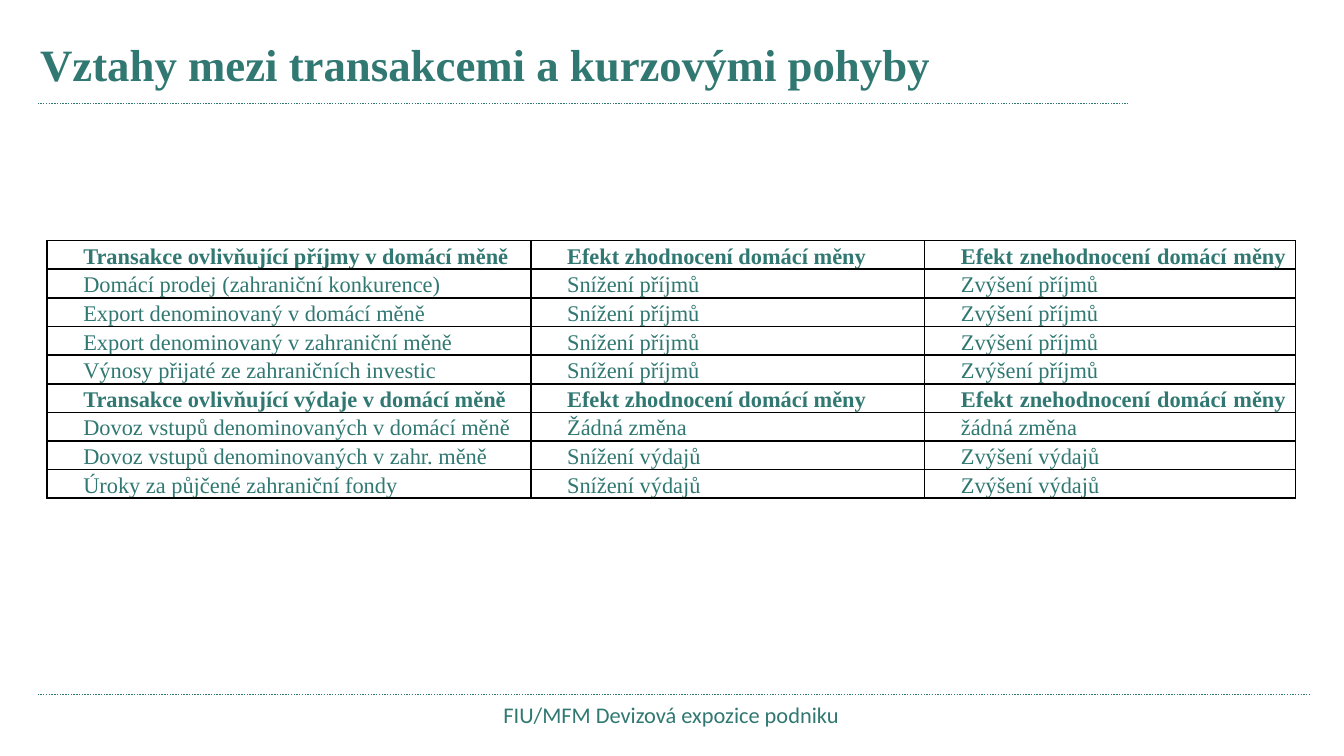
"""Build a slide with a table of transactions and exchange rate effects."""
from dataclasses import dataclass

import lxml.etree
import pptx
import pptx.dml.color
import pptx.enum.dml
import pptx.enum.shapes
import pptx.enum.text
import pptx.oxml.ns
import pptx.util

Inches = pptx.util.Inches
Pt = pptx.util.Pt
Align = pptx.enum.text.PP_ALIGN
Anchor = pptx.enum.text.MSO_ANCHOR
qn = pptx.oxml.ns.qn


@dataclass(frozen=True)
class Theme:
    """Colours, fonts and type sizes of the slide."""
    green: str = "307871"
    border: str = "000000"
    serif: str = "Times New Roman"
    sans: str = "Calibri"
    title_size: int = 24
    body_size: int = 12


class SlideBuilder:
    """Draws styled elements on one slide."""

    def __init__(self, slide, theme):
        """Keep the slide and its theme."""
        self.slide = slide
        self.theme = theme

    def style(self, paragraph, font_name, size, bold=False):
        """Set the font of a whole paragraph."""
        font = paragraph.font
        font.name = font_name
        font.size = Pt(size)
        font.bold = bold
        font.color.rgb = pptx.dml.color.RGBColor.from_string(self.theme.green)

    def rule(self, left, right, top):
        """Draw a dotted horizontal line."""
        line = self.slide.shapes.add_connector(
            pptx.enum.shapes.MSO_CONNECTOR.STRAIGHT,
            Inches(left), Inches(top), Inches(right), Inches(top))
        line.line.color.rgb = pptx.dml.color.RGBColor.from_string(self.theme.green)
        line.line.width = Pt(0.75)
        line.line.dash_style = pptx.enum.dml.MSO_LINE.ROUND_DOT
        lxml.etree.SubElement(line._element.spPr, qn("a:effectLst"))

    def text(self, words, place, font_name, size, bold=False,
             align=Align.LEFT, anchor=Anchor.TOP):
        """Add a text box with one paragraph."""
        box = self.slide.shapes.add_textbox(*map(Inches, place))
        frame = box.text_frame
        frame.word_wrap = True
        frame.vertical_anchor = anchor
        paragraph = frame.paragraphs[0]
        paragraph.text = words
        paragraph.alignment = align
        self.style(paragraph, font_name, size, bold)

    def cell(self, cell, words, bold):
        """Fill one table cell with indented text and borders."""
        cell.margin_left = cell.margin_right = Inches(0.07)
        cell.margin_top = cell.margin_bottom = 0
        properties = cell._tc.get_or_add_tcPr()
        for side in ("lnL", "lnR", "lnT", "lnB"):
            edge = lxml.etree.SubElement(properties, qn(f"a:{side}"), w=str(Pt(1)))
            fill = lxml.etree.SubElement(edge, qn("a:solidFill"))
            lxml.etree.SubElement(fill, qn("a:srgbClr"), val=self.theme.border)
        cell.fill.background()
        paragraph = cell.text_frame.paragraphs[0]
        paragraph.text = words
        paragraph.alignment = Align.JUSTIFY
        paragraph.line_spacing = 1.15
        paragraph._p.get_or_add_pPr().set("indent", str(Inches(0.2)))
        self.style(paragraph, self.theme.serif, self.theme.body_size, bold)

    def table(self, rows, heading_rows, left, top, widths, row_height):
        """Add a plain table with bold heading rows."""
        table = self.slide.shapes.add_table(
            len(rows), len(widths), Inches(left), Inches(top),
            Inches(sum(widths)), Inches(row_height * len(rows))).table
        table.first_row = False
        table.horz_banding = False
        for column, width in zip(table.columns, widths):
            column.width = Inches(width)
        for index, values in enumerate(rows):
            table.rows[index].height = Inches(row_height)
            for position, words in enumerate(values):
                self.cell(table.cell(index, position), words, index in heading_rows)


EFFECTS = ("Efekt zhodnocení domácí měny ", "Efekt znehodnocení domácí měny ")
INCOME = ("Snížení příjmů", "Zvýšení příjmů")
EXPENSE = ("Snížení výdajů", "Zvýšení výdajů")
ROWS = [
    ("Transakce ovlivňující příjmy v domácí měně", *EFFECTS),
    ("Domácí prodej (zahraniční konkurence)", *INCOME),
    ("Export denominovaný v domácí měně", *INCOME),
    ("Export denominovaný v zahraniční měně", *INCOME),
    ("Výnosy přijaté ze zahraničních investic", *INCOME),
    ("Transakce ovlivňující výdaje v domácí měně", *EFFECTS),
    ("Dovoz vstupů denominovaných v domácí měně", "Žádná změna ", "žádná změna "),
    ("Dovoz vstupů denominovaných v zahr. měně", *EXPENSE),
    ("Úroky za půjčené zahraniční fondy", *EXPENSE),
]


def main():
    """Build and save the deck."""
    deck = pptx.Presentation()
    deck.slide_width = Inches(10)
    deck.slide_height = Inches(10) * 9 // 16
    theme = Theme()
    page = SlideBuilder(deck.slides.add_slide(deck.slide_layouts[6]), theme)
    page.rule(0.28, 8.39, 0.77)
    page.rule(0.28, 9.75, 5.17)
    page.table(ROWS, (0, 5), 0.35, 1.79, (3.6, 2.93, 2.76), 0.21)
    page.text("Vztahy mezi transakcemi a kurzovými pohyby", (0.2, 0.19, 9.13, 0.56),
              theme.serif, theme.title_size, bold=True, anchor=Anchor.MIDDLE)
    page.text("FIU/MFM Devizová expozice podniku", (0.31, 5.17, 9.37, 0.31),
              theme.sans, theme.body_size, align=Align.CENTER)
    deck.save("out.pptx")


if __name__ == "__main__":
    main()
